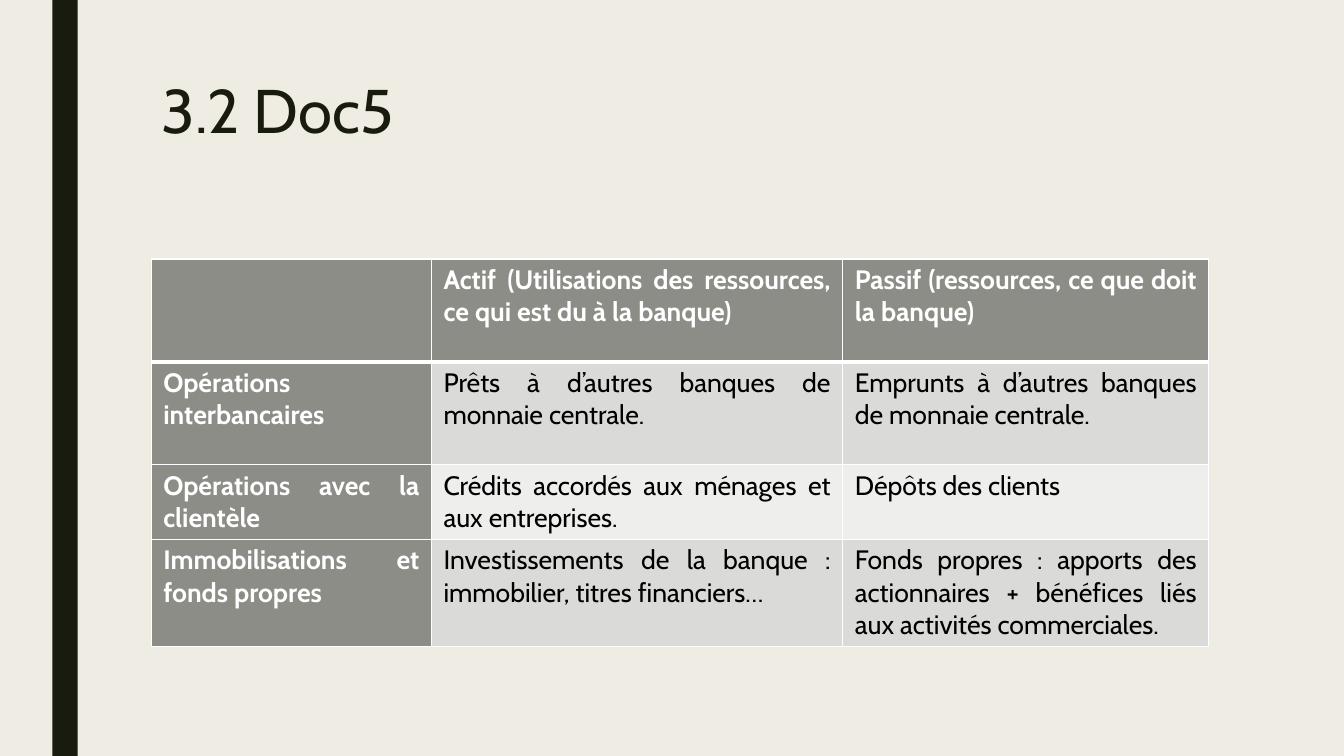
import dataclasses

import pptx
import pptx.dml.color
import pptx.enum.shapes
import pptx.enum.text
import pptx.oxml
import pptx.oxml.ns
import pptx.util

Inches = pptx.util.Inches


@dataclasses.dataclass(frozen=True)
class Theme:
    """Colours, font and sizes of the slide."""
    font: str = "Cabin"
    background: str = "EFEDE3"
    dark: str = "191B0E"
    header: str = "8C8D86"
    bands: tuple = ("DADBD9", "EEEEED")
    white: str = "FFFFFF"
    black: str = "000000"
    title_size: float = 44
    table_size: float = 19
    thin: float = 0.96
    thick: float = 3


THEME = Theme()

COLUMN_WIDTHS = (2.78, 4.08, 3.63)
ROW_HEIGHTS = (1.02, 1.02, 0.74, 1.06)
BALANCE_SHEET = (
    ("", "Actif (Utilisations des ressources, ce qui est du à la banque)",
     "Passif (ressources, ce que doit la banque)"),
    ("Opérations interbancaires", "Prêts à d’autres banques de monnaie centrale.",
     "Emprunts à d’autres banques de monnaie centrale."),
    ("Opérations avec la clientèle", "Crédits accordés aux ménages et aux entreprises.",
     "Dépôts des clients"),
    ("Immobilisations et fonds propres",
     "Investissements de la banque : immobilier, titres financiers…",
     "Fonds propres : apports des actionnaires + bénéfices liés aux activités commerciales."),
)


def colour(code):
    """Return the colour for a hexadecimal code."""
    return pptx.dml.color.RGBColor.from_string(code)


def add_span(para, text, size, code, bold=False):
    """Add one formatted run to a paragraph."""
    span = para.add_run()
    span.text = text
    span.font.name = THEME.font
    span.font.size = pptx.util.Pt(size)
    span.font.bold = bold
    span.font.color.rgb = colour(code)


def add_backdrop(page, left, top, width, height):
    """Fill the background and draw the vertical bar in its box."""
    page.background.fill.solid()
    page.background.fill.fore_color.rgb = colour(THEME.background)
    bar = page.shapes.add_shape(pptx.enum.shapes.MSO_SHAPE.RECTANGLE,
                                Inches(left), Inches(top), Inches(width), Inches(height))
    bar.shadow.inherit = False
    bar.fill.solid()
    bar.fill.fore_color.rgb = colour(THEME.dark)
    bar.line.fill.background()


def add_title(page, text, left, top, width, height):
    """Place the title placeholder in its box and write the title."""
    title = page.shapes.title
    title.left, title.top = Inches(left), Inches(top)
    title.width, title.height = Inches(width), Inches(height)
    frame = title.text_frame
    frame.word_wrap = True
    frame.auto_size = pptx.enum.text.MSO_AUTO_SIZE.NONE
    frame.vertical_anchor = pptx.enum.text.MSO_ANCHOR.TOP
    para = frame.paragraphs[0]
    para.alignment = pptx.enum.text.PP_ALIGN.LEFT
    para.line_spacing = 0.89
    add_span(para, text, THEME.title_size, THEME.dark)


def add_borders(cell, top, bottom):
    """Draw white borders round a cell, with the given top and bottom widths."""
    properties = cell._tc.get_or_add_tcPr()
    sides = (("lnL", THEME.thin), ("lnR", THEME.thin), ("lnT", top), ("lnB", bottom))
    for position, (side, width) in enumerate(sides):
        properties.insert(position, pptx.oxml.parse_xml(
            f'<a:{side} {pptx.oxml.ns.nsdecls("a")} w="{pptx.util.Pt(width)}">'
            f'<a:solidFill><a:srgbClr val="{THEME.white}"/></a:solidFill></a:{side}>'))


def fill_cell(cell, text, row, column):
    """Write and format a cell according to its row and column."""
    heading = row == 0 or column == 0
    cell.margin_left = cell.margin_right = Inches(0.12)
    cell.margin_top = cell.margin_bottom = Inches(0.05)
    cell.fill.solid()
    cell.fill.fore_color.rgb = colour(THEME.header if heading else THEME.bands[(row - 1) % 2])
    add_borders(cell, THEME.thick if row == 1 else THEME.thin,
                THEME.thick if row == 0 else THEME.thin)
    if text:
        para = cell.text_frame.paragraphs[0]
        para.alignment = pptx.enum.text.PP_ALIGN.JUSTIFY
        add_span(para, text, THEME.table_size, THEME.white if heading else THEME.black, heading)


def add_balance_sheet(page, left, top):
    """Build the balance sheet table from its top left corner."""
    table = page.shapes.add_table(
        len(ROW_HEIGHTS), len(COLUMN_WIDTHS), Inches(left), Inches(top),
        Inches(sum(COLUMN_WIDTHS)), Inches(sum(ROW_HEIGHTS))).table
    for column, width in zip(table.columns, COLUMN_WIDTHS):
        column.width = Inches(width)
    for row, height in zip(table.rows, ROW_HEIGHTS):
        row.height = Inches(height)
    for row, texts in enumerate(BALANCE_SHEET):
        for column, text in enumerate(texts):
            fill_cell(table.cell(row, column), text, row, column)


def main():
    """Build the deck and save it."""
    deck = pptx.Presentation()
    deck.slide_width, deck.slide_height = Inches(13.33), Inches(7.5)
    page = deck.slides.add_slide(deck.slide_layouts.get_by_name("Title Only"))
    add_backdrop(page, 0.52, 0, 0.25, 7.5)
    add_title(page, "3.2 Doc5", 1.5, 0.75, 10.5, 1.62)
    add_balance_sheet(page, 1.5, 2.57)
    deck.save("out.pptx")


if __name__ == "__main__":
    main()
